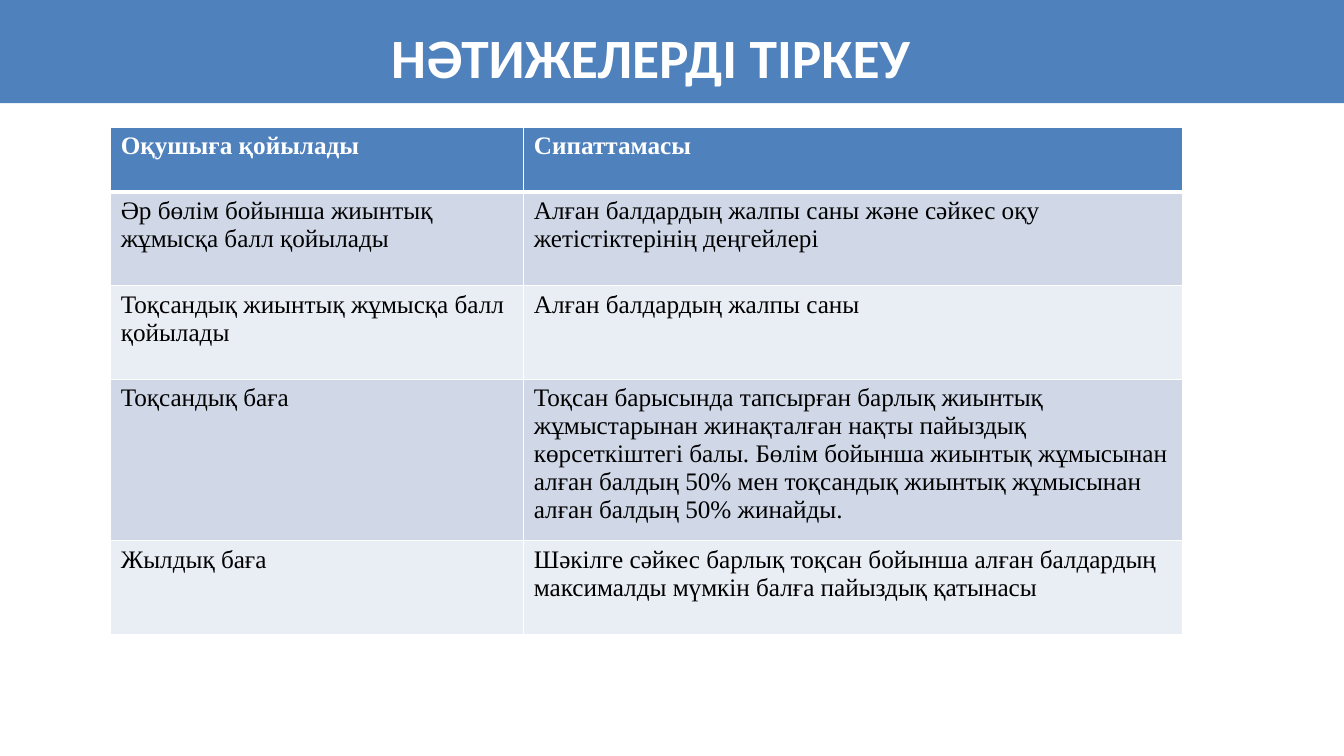
from typing import NamedTuple

from lxml.etree import SubElement
from pptx import Presentation
from pptx.dml.color import RGBColor
from pptx.enum.shapes import MSO_SHAPE
from pptx.enum.text import MSO_ANCHOR, PP_ALIGN
from pptx.oxml.ns import qn
from pptx.util import Cm, Pt

BLUE, WHITE, BLACK = "4F81BD", "FFFFFF", "000000"
BANDS = ("D0D8E8", "E9EDF4")
COLUMN_WIDTHS = (10.41, 16.59)


class Row(NamedTuple):
    height: float
    item: str
    description: str


ROWS = (
    Row(1.64, "Оқушыға қойылады", "Сипаттамасы"),
    Row(2.36, "Әр бөлім бойынша жиынтық жұмысқа балл қойылады",
        "Алған балдардың жалпы саны және сәйкес оқу жетістіктерінің деңгейлері"),
    Row(2.36, "Тоқсандық жиынтық жұмысқа балл қойылады",
        "Алған балдардың жалпы саны"),
    Row(3.78, "Тоқсандық баға",
        "Тоқсан барысында тапсырған барлық жиынтық жұмыстарынан жинақталған "
        "нақты пайыздық көрсеткіштегі балы. Бөлім бойынша жиынтық жұмысынан "
        "алған балдың 50% мен тоқсандық жиынтық жұмысынан алған балдың 50% жинайды."),
    Row(2.36, "Жылдық баға",
        "Шәкілге сәйкес барлық тоқсан бойынша алған балдардың максималды "
        "мүмкін балға пайыздық қатынасы"),
)


def rgb(color: str) -> RGBColor:
    return RGBColor.from_string(color)


def write(tf, text: str, *, font="Times New Roman", size=18.0, color=BLACK,
          bold=False, align=PP_ALIGN.LEFT) -> None:
    p = tf.paragraphs[0]
    p.alignment = align
    r = p.add_run()
    r.text = text
    r.font.name, r.font.size, r.font.bold = font, Pt(size), bold
    r.font.color.rgb = rgb(color)


def set_borders(cell, **widths: float) -> None:
    """Draw white cell borders; the fill must be set afterwards."""
    tc_pr = cell._tc.get_or_add_tcPr()
    for side, width in widths.items():
        line = SubElement(tc_pr, qn(f"a:ln{side}"), w=str(Pt(width)))
        fill = SubElement(line, qn("a:solidFill"))
        SubElement(fill, qn("a:srgbClr"), val=WHITE)


def add_title(s, text: str) -> None:
    sp = s.shapes.add_shape(MSO_SHAPE.RECTANGLE, 0, 0, Cm(33.87), Cm(2.6))
    sp.shadow.inherit = False
    sp.fill.solid()
    sp.fill.fore_color.rgb = rgb(BLUE)
    sp.line.fill.background()

    tf = s.shapes.add_textbox(Cm(2.9), Cm(0.58), Cm(27), Cm(1.7)).text_frame
    tf.word_wrap = True
    tf.vertical_anchor = MSO_ANCHOR.MIDDLE
    write(tf, text, font="Calibri", size=39.6, color=WHITE, bold=True,
          align=PP_ALIGN.CENTER)


def add_results_table(s, rows: tuple[Row, ...]) -> None:
    table = s.shapes.add_table(
        len(rows), len(COLUMN_WIDTHS), Cm(2.79), Cm(3.2),
        Cm(sum(COLUMN_WIDTHS)), Cm(sum(row.height for row in rows))).table
    for column, width in zip(table.columns, COLUMN_WIDTHS):
        column.width = Cm(width)

    for i, row in enumerate(rows):
        header = i == 0
        table.rows[i].height = Cm(row.height)
        for j, text in enumerate((row.item, row.description)):
            cell = table.cell(i, j)
            set_borders(cell, L=1, R=1, T=3 if i == 1 else 1, B=3 if header else 1)
            cell.fill.solid()
            cell.fill.fore_color.rgb = rgb(BLUE if header else BANDS[(i - 1) % 2])
            write(cell.text_frame, text, color=WHITE if header else BLACK, bold=header)


def main() -> None:
    prs = Presentation()
    prs.slide_width, prs.slide_height = Cm(33.87), Cm(19.05)
    s = prs.slides.add_slide(prs.slide_layouts[6])

    # Title band
    add_title(s, "НӘТИЖЕЛЕРДІ ТІРКЕУ")

    # Table of results
    add_results_table(s, ROWS)

    prs.save("out.pptx")


if __name__ == "__main__":
    main()
